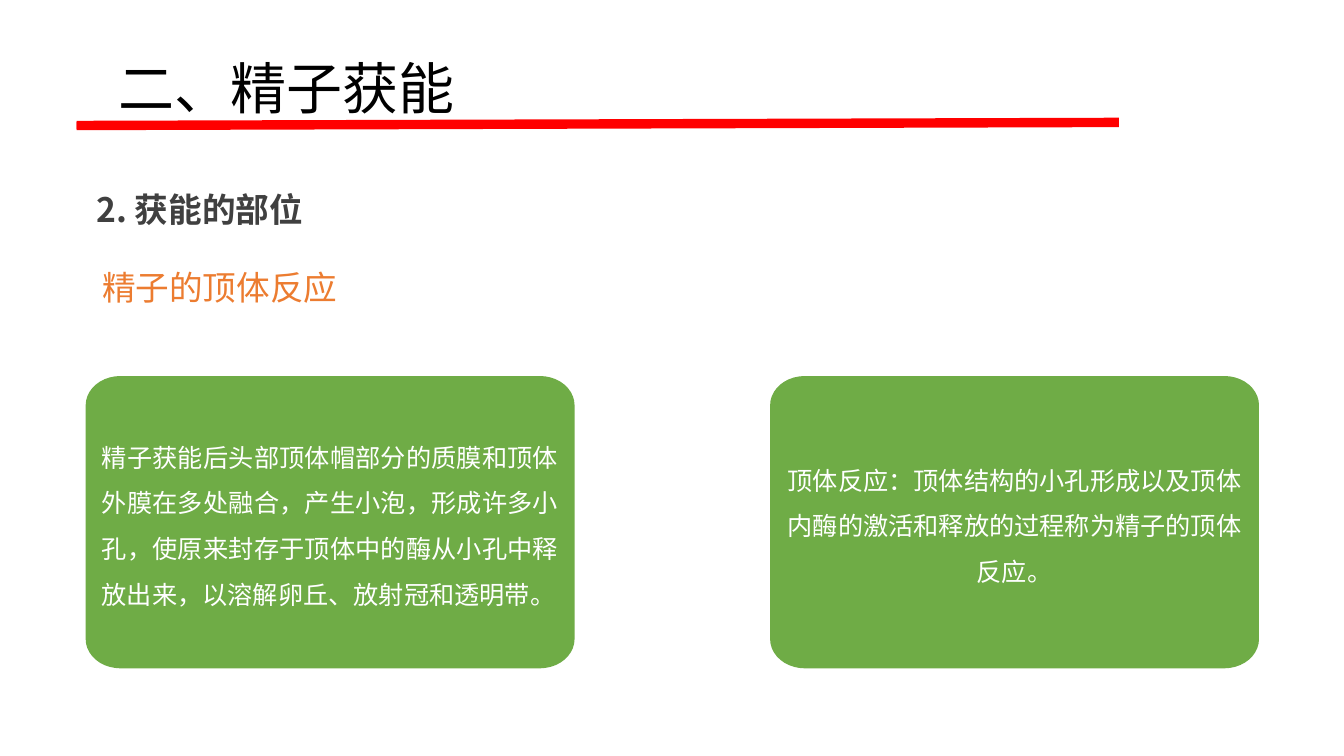
from dataclasses import dataclass
from math import cos, pi, sin

from pptx import Presentation
from pptx.dml.color import RGBColor as RGB
from pptx.enum.shapes import MSO_CONNECTOR as Conn
from pptx.enum.text import MSO_ANCHOR as Anchor, PP_ALIGN as Align
from pptx.oxml.ns import qn
from pptx.util import Pt


@dataclass(frozen=True)
class Theme:
    font: str = "Noto Sans CJK SC"
    black: RGB = RGB(0x00, 0x00, 0x00)
    red: RGB = RGB(0xFF, 0x00, 0x00)
    gray: RGB = RGB(0x40, 0x40, 0x40)
    orange: RGB = RGB(0xEC, 0x7C, 0x30)
    green: RGB = RGB(0x6F, 0xAC, 0x46)
    white: RGB = RGB(0xFF, 0xFF, 0xFF)
    title: int = 40
    heading: int = 24
    body: int = 18
    leading: float = 32.5
    rule: int = 6


T = Theme()


def apply(target, values):
    for name, value in values.items():
        setattr(target, name, value)


def add_text(s, box, text, size, color, bold=False, inset=0,
             anchor=Anchor.TOP, **para):
    tf = s.shapes.add_textbox(*map(Pt, box)).text_frame
    apply(tf, {"word_wrap": True, "vertical_anchor": anchor,
               "margin_left": Pt(inset), "margin_right": Pt(inset),
               "margin_top": 0, "margin_bottom": 0})
    p = tf.paragraphs[0]
    apply(p, para)
    r = p.add_run()
    r.text = text
    apply(r.font, {"name": T.font, "size": Pt(size), "bold": bold})
    r.font.color.rgb = color
    ea = r.font._element.makeelement(qn("a:ea"), {"typeface": T.font})
    r.font._element.find(qn("a:latin")).addnext(ea)


def add_title(s, box, text):
    x, y, w, h = box
    add_text(s, (x + 23, y, w, h), text, T.title, T.black, inset=7.2,
             anchor=Anchor.MIDDLE, line_spacing=0.9)
    for top in (y + 76.3, y + 77):
        line = s.shapes.add_connector(Conn.STRAIGHT, Pt(x), Pt(top),
                                      Pt(x + 744.5), Pt(top - 2.2))
        line.line.color.rgb = T.red
        line.line.width = Pt(T.rule)
        sp_pr = line._element.spPr
        sp_pr.append(sp_pr.makeelement(qn("a:effectLst"), {}))


def add_headings(s, box, heading, subheading):
    x, y, w, h = box
    add_text(s, (x, y, w, h), heading, T.heading, T.gray, bold=True)
    add_text(s, (x + 4, y + 56, w, h), subheading, T.heading, T.orange)


def rounded_outline(box, rx, ry, steps=10):
    x, y, w, h = box
    centers = ((x + w - rx, y + h - ry), (x + rx, y + h - ry),
               (x + rx, y + ry), (x + w - rx, y + ry))
    return [(cx + rx * cos(a), cy + ry * sin(a))
            for q, (cx, cy) in enumerate(centers)
            for a in (pi / 2 * (q + i / steps) for i in range(steps + 1))]


def add_card(s, box, text, lines, align):
    x, y, w, h = box
    points = rounded_outline(box, 24.8, 20.9)
    start, *rest = [(Pt(px), Pt(py)) for px, py in points]
    builder = s.shapes.build_freeform(*start)
    builder.add_line_segments(rest, close=True)
    sp = builder.convert_to_shape()
    sp.shadow.inherit = False
    sp.fill.solid()
    sp.fill.fore_color.rgb = T.green
    sp.line.fill.background()
    height = lines * T.leading
    top = y + (h - height) / 2 - 3
    add_text(s, (x + 11.5, top, w - 23, height), text, T.body, T.white,
             alignment=align, line_spacing=Pt(T.leading))


def main():
    prs = Presentation()
    apply(prs, {"slide_width": Pt(960), "slide_height": Pt(540)})
    s = prs.slides.add_slide(prs.slide_layouts[6])
    add_title(s, (54.7, 13, 828, 104.4), "二、精子获能")
    add_headings(s, (69, 134.6, 232, 35), "2. 获能的部位", "精子的顶体反应")
    cards = (
        ("精子获能后头部顶体帽部分的质膜和顶体外膜在多处融合，产生小泡，"
         "形成许多小孔，使原来封存于顶体中的酶从小孔中释放出来，"
         "以溶解卵丘、放射冠和透明带。", 4, Align.JUSTIFY),
        ("顶体反应：顶体结构的小孔形成以及顶体内酶的激活和释放的过程"
         "称为精子的顶体反应。", 3, Align.CENTER),
    )
    for i, card in enumerate(cards):
        add_card(s, (61.2 + i * 488.9, 268.6, 349.2, 208.8), *card)
    prs.save("out.pptx")


if __name__ == "__main__":
    main()
